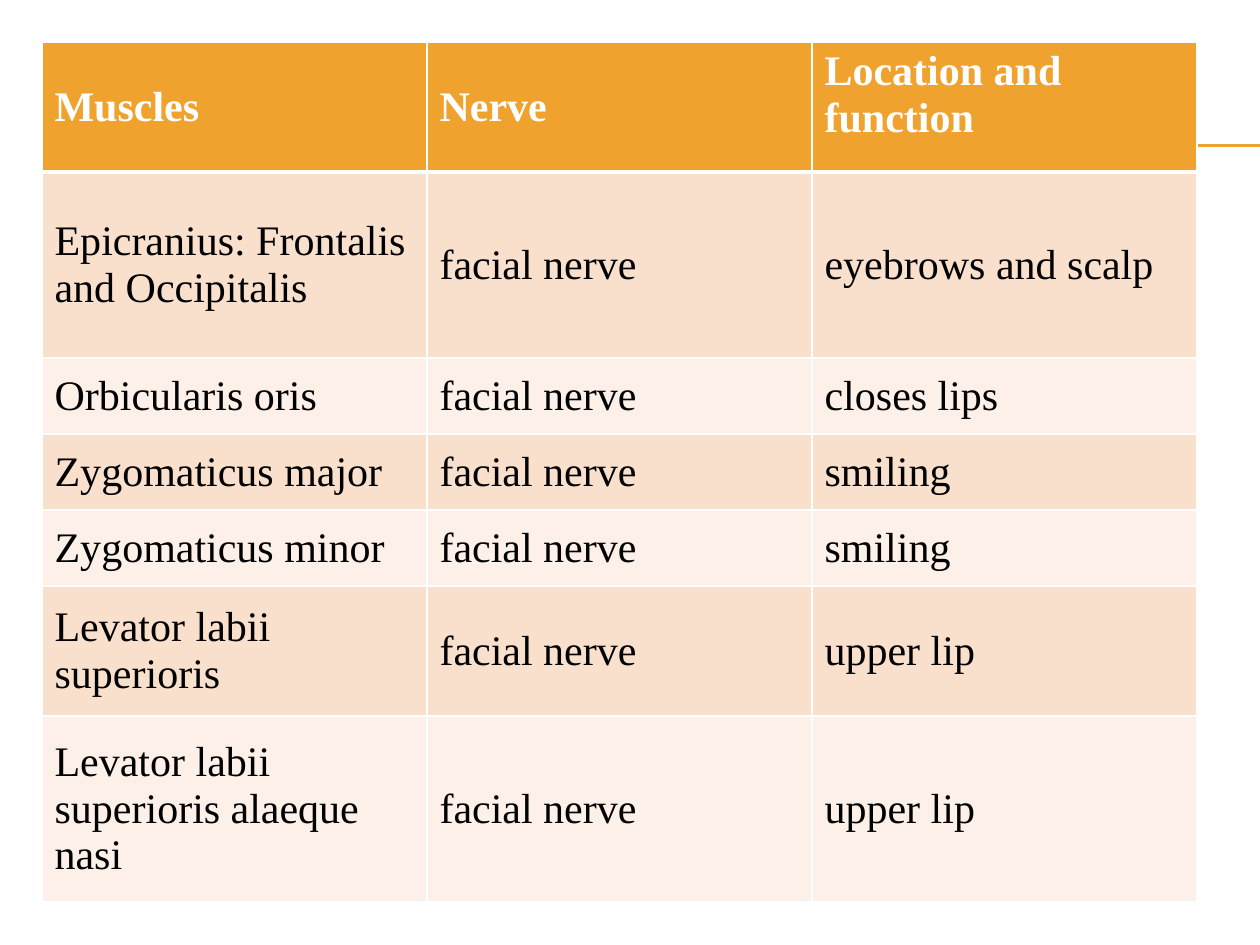
import pptx
import pptx.util
import pptx.dml.color
import pptx.enum.shapes
import pptx.enum.text
import pptx.oxml.ns
from lxml import etree

RGB = pptx.dml.color.RGBColor
ANCHOR = pptx.enum.text.MSO_ANCHOR
qn = pptx.oxml.ns.qn

HEADER = ["Muscles", "Nerve", "Location and function"]
# muscle, location and function, row height in px
MUSCLES = [
    ("Epicranius: Frontalis and Occipitalis", "eyebrows and scalp", 186),
    ("Orbicularis oris", "closes lips", 76),
    ("Zygomaticus major", "smiling", 76),
    ("Zygomaticus minor", "smiling", 76),
    ("Levator labii superioris", "upper lip", 130),
    ("Levator labii superioris alaeque nasi", "upper lip", 186),
]
NERVE = "facial nerve"
HEADER_HEIGHT = 130
LEFT, TOP, COL_WIDTH = 42, 42, 385
RULE_LEFT, RULE_RIGHT, RULE_TOPS = 70, 1260, (145, 146)

ORANGE = RGB(0xF0, 0xA2, 0x2E)
BANDS = [RGB(0xF9, 0xE0, 0xCD), RGB(0xFC, 0xF0, 0xE8)]
WHITE = RGB(0xFF, 0xFF, 0xFF)
BLACK = RGB(0, 0, 0)
HEADER_FONT = {"name": "Times New Roman", "size": pptx.util.Pt(24), "bold": True}
BODY_FONT = {**HEADER_FONT, "bold": False}


def px(n):
    return pptx.util.Emu(n * 914400 // 126)


def add_borders(cell, bottom):
    """Draw white cell borders, 1 pt wide except for the bottom one."""
    tcPr = cell._tc.get_or_add_tcPr()
    widths = {"a:lnL": 1, "a:lnR": 1, "a:lnT": 1, "a:lnB": bottom}
    for i, (tag, width) in enumerate(widths.items()):
        ln = etree.Element(qn(tag), w=str(pptx.util.Pt(width)))
        fill = etree.SubElement(ln, qn("a:solidFill"))
        etree.SubElement(fill, qn("a:srgbClr"), val=str(WHITE))
        tcPr.insert(i, ln)


def fill_cell(cell, text, font, color, fill, bottom):
    cell.vertical_anchor = ANCHOR.MIDDLE
    cell.fill.solid()
    cell.fill.fore_color.rgb = fill
    add_borders(cell, bottom)
    r = cell.text_frame.paragraphs[0].add_run()
    r.text = text
    for key, value in font.items():
        setattr(r.font, key, value)
    r.font.color.rgb = color


prs = pptx.Presentation()
prs.slide_width, prs.slide_height = px(1260), px(945)
s = prs.slides.add_slide(prs.slide_layouts[6])

for y in RULE_TOPS:
    rule = s.shapes.add_connector(
        pptx.enum.shapes.MSO_CONNECTOR.STRAIGHT,
        px(RULE_LEFT), px(y), px(RULE_RIGHT), px(y))
    rule.line.color.rgb = ORANGE
    rule.line.width = pptx.util.Pt(0.75)
    etree.SubElement(rule._element.spPr, qn("a:effectLst"))

rows = [HEADER] + [[muscle, NERVE, place] for muscle, place, _ in MUSCLES]
heights = [HEADER_HEIGHT] + [height for *_, height in MUSCLES]
table = s.shapes.add_table(
    len(rows), len(HEADER), px(LEFT), px(TOP),
    px(COL_WIDTH * len(HEADER)), px(sum(heights))).table
for column in table.columns:
    column.width = px(COL_WIDTH)
for i, (texts, height) in enumerate(zip(rows, heights)):
    table.rows[i].height = px(height)
    for j, text in enumerate(texts):
        if i == 0:
            style = (HEADER_FONT, WHITE, ORANGE, 3)
        else:
            style = (BODY_FONT, BLACK, BANDS[(i - 1) % 2], 1)
        fill_cell(table.cell(i, j), text, *style)
table.cell(0, len(HEADER) - 1).vertical_anchor = ANCHOR.TOP

prs.save("out.pptx")
